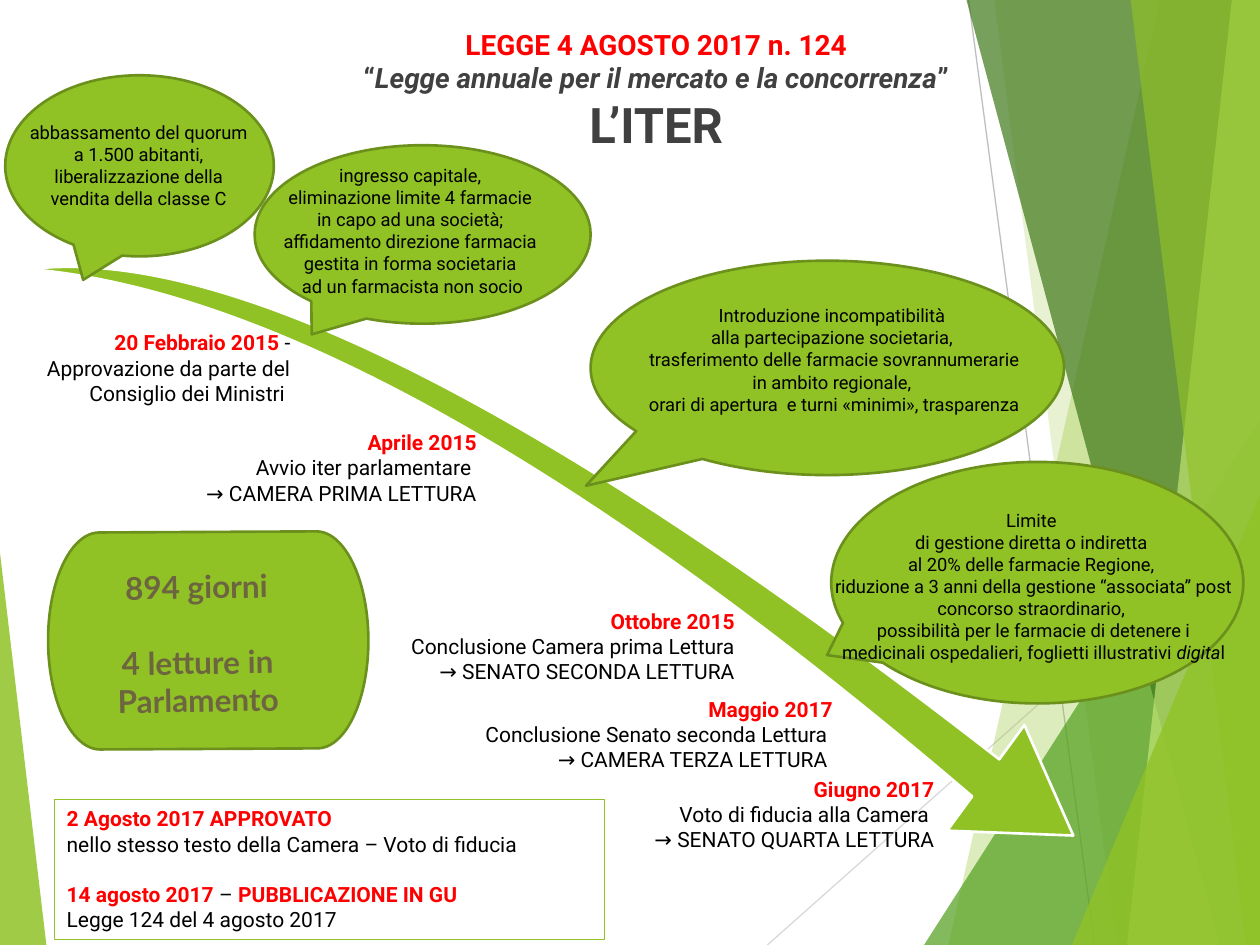
"""Build the slide on the passage of Italian competition law 124 of 2017."""
import pptx
import pptx.dml.color
import pptx.enum.shapes
import pptx.enum.text
import pptx.oxml
import pptx.oxml.ns
import pptx.util

Pt = pptx.util.Pt
RGB = pptx.dml.color.RGBColor
SHAPE = pptx.enum.shapes.MSO_SHAPE
ALIGN = pptx.enum.text.PP_ALIGN
ANCHOR = pptx.enum.text.MSO_ANCHOR

WIDTH, HEIGHT, FACET_TOP = 720, 540, -0.72
GREEN, DARK_GREEN = RGB(0x90, 0xC2, 0x26), RGB(0x6B, 0x90, 0x1C)
LEAF, FOREST, LIME = RGB(0x54, 0xA0, 0x21), RGB(0x3F, 0x78, 0x19), RGB(0xC0, 0xE4, 0x74)
RED, BLACK, WHITE = RGB(0xFF, 0, 0), RGB(0, 0, 0), RGB(0xFF, 0xFF, 0xFF)
CHARCOAL, OLIVE = RGB(0x40, 0x40, 0x40), RGB(0x6D, 0x65, 0x40)

RULES = [
    ((553.5, 0), (625.5, HEIGHT), RGB(0xBF, 0xBF, 0xBF)),
    ((WIDTH, 290), (438.5, HEIGHT), RGB(0xD9, 0xD9, 0xD9)),
]
# Facets are (top x, bottom x); triangles are (box, apex).
DECOR = [
    ("facet", (663, 542), GREEN, 30),
    ("facet", (567.5, 638.5), GREEN, 20),
    ("triangle", ((528, 240, 192, 300), 1), LEAF, 72),
    ("facet", (551.5, 697), FOREST, 70),
    ("facet", (704, 643.5), LIME, 70),
    ("facet", (646, 711.5), GREEN, 65),
    ("triangle", ((612.5, 283, 107.5, 257), 1), GREEN, 80),
    ("triangle", ((0, 316, 26.5, 224), 0), GREEN, 85),
]

DATE = {"color": RED, "bold": True}
ITALIC = {"italic": True}
TITLE = [
    [("LEGGE 4 AGOSTO 2017 n. 124", {"color": RED})],
    ["“", ("Legge annuale per il mercato e la concorrenza", ITALIC), "”"],
    [("L’ITER", {"size": 28})],
]
MILESTONES = [
    ((3, 185, 170), [
        [("20 Febbraio 2015 ", DATE), "- Approvazione da parte del Consiglio dei Ministri "]]),
    ((76.5, 242, 203), [
        [("Aprile 2015", DATE)], ["Avvio iter parlamentare "], ["→ CAMERA PRIMA LETTURA"]]),
    ((224, 344, 203), [
        [("Ottobre 2015", DATE)], ["Conclusione Camera prima Lettura"],
        ["→ SENATO SECONDA LETTURA"]]),
    ((263.5, 394.5, 219.5), [
        [("Maggio 2017", DATE)], ["Conclusione Senato seconda Lettura "],
        ["→ CAMERA TERZA LETTURA "]]),
    ((354.5, 440, 186.5), [
        [("Giugno 2017", DATE)], ["Voto di fiducia alla Camera "],
        ["→ SENATO QUARTA LETTURA"]]),
]
MILESTONE_HEIGHT = 51
BUBBLES = [
    ((475, 264, 235.5, 138), (-0.51, 0.3), (470, 287.5, 241.2, 96.5), [
        ["Limite "],
        ["di gestione diretta o indiretta "],
        ["al 20% delle farmacie Regione, "],
        ["riduzione a 3 anni della gestione “associata” post concorso straordinario, "],
        ["possibilità per le farmacie di detenere i medicinali ospedalieri, "
         "foglietti illustrativi ", ("digita", ITALIC), "l"]]),
    ((337.5, 149, 270.5, 122.5), (-0.51, 0.55), (322, 170.5, 309.5, 70.5), [
        ["Introduzione incompatibilità "],
        ["alla partecipazione societaria, "],
        ["trasferimento delle farmacie sovrannumerarie"],
        ["in ambito regionale, "],
        ["orari di apertura  e turni «minimi», trasparenza"]]),
    ((145.5, 83, 192, 102), (-0.33, 0.56), (136, 90.5, 199.5, 83.5), [
        ["ingresso capitale, "],
        ["eliminazione limite 4 farmacie "],
        ["in capo ad una società; "],
        ["affidamento direzione farmacia "],
        ["gestita in forma societaria "],
        ["ad un farmacista non socio"]]),
    ((3, 43, 153.5, 103.5), (-0.21, 0.63), (8, 65.5, 142.5, 58), [
        ["abbassamento del quorum a 1.500 abitanti, liberalizzazione della "
         "vendita della classe C"]]),
]
DURATION = [["894 giorni"], ["4 letture in Parlamento"]]
OUTCOME = [
    [("2 Agosto 2017 APPROVATO", DATE)],
    ["nello stesso testo della Camera – Voto di fiducia"],
    [("14 agosto 2017", DATE), " – ", ("PUBBLICAZIONE IN GU", DATE)],
    ["Legge 124 del 4 agosto 2017"],
]


def points(values):
    return [Pt(value) for value in values]


def paint(shape, fill=None, line=None, weight=1.5, opacity=100):
    shape.shadow.inherit = False
    if fill is None:
        shape.fill.background()
    else:
        shape.fill.solid()
        shape.fill.fore_color.rgb = fill
    if opacity < 100:
        color = shape.fill._xPr.find(".//" + pptx.oxml.ns.qn("a:srgbClr"))
        color.append(pptx.oxml.parse_xml(
            f'<a:alpha {pptx.oxml.ns.nsdecls("a")} val="{opacity * 1000}"/>'))
    if line is None:
        shape.line.fill.background()
    else:
        shape.line.color.rgb = line
        shape.line.width = Pt(weight)


def add_preset(slide, preset, box, adjustments=(), rotation=0, **look):
    shape = slide.shapes.add_shape(preset, *points(box))
    for index, value in enumerate(adjustments):
        shape.adjustments[index] = value
    shape.rotation = rotation
    paint(shape, **look)
    return shape


def add_facet(slide, top_x, bottom_x, **look):
    builder = slide.shapes.build_freeform(top_x, FACET_TOP, scale=Pt(1))
    builder.add_line_segments(
        [(WIDTH, FACET_TOP), (WIDTH, HEIGHT), (bottom_x, HEIGHT)], close=True)
    paint(builder.convert_to_shape(), **look)


def add_rule(slide, start, end, color):
    rule = slide.shapes.add_connector(
        pptx.enum.shapes.MSO_CONNECTOR.STRAIGHT, *points(start + end))
    rule.line.color.rgb = color
    rule.line.width = Pt(0.75)
    rule._element.spPr.append(
        pptx.oxml.parse_xml(f'<a:effectLst {pptx.oxml.ns.nsdecls("a")}/>'))


def write(shape, paragraphs, size=12, font="Roboto", color=BLACK, bold=False,
          align=ALIGN.LEFT, anchor=ANCHOR.TOP, gaps=None):
    frame = shape.text_frame
    frame.word_wrap = True
    frame.vertical_anchor = anchor
    for index, parts in enumerate(paragraphs):
        paragraph = frame.add_paragraph() if index else frame.paragraphs[0]
        paragraph.alignment = align
        if gaps and index in gaps:
            paragraph.space_before = Pt(gaps[index])
        for part in parts:
            words, style = (part, {}) if isinstance(part, str) else part
            run = paragraph.add_run()
            run.text = words
            run.font.name = font
            run.font.size = Pt(style.get("size", size))
            run.font.bold = style.get("bold", bold)
            run.font.italic = style.get("italic", False)
            run.font.color.rgb = style.get("color", color)


def main():
    deck = pptx.Presentation()
    deck.slide_width, deck.slide_height = Pt(WIDTH), Pt(HEIGHT)
    slide = deck.slides.add_slide(deck.slide_layouts[6])

    for rule in RULES:
        add_rule(slide, *rule)
    for kind, geometry, color, opacity in DECOR:
        if kind == "facet":
            add_facet(slide, *geometry, fill=color, opacity=opacity)
        else:
            box, apex = geometry
            add_preset(slide, SHAPE.ISOSCELES_TRIANGLE, box, [apex],
                       fill=color, opacity=opacity)

    add_preset(slide, SHAPE.SWOOSH_ARROW, (-4.5, 209, 658, 193), (0.135, 0.314),
               rotation=42.6, fill=GREEN, line=WHITE)
    for balloon, tail, _, _ in BUBBLES:
        add_preset(slide, SHAPE.OVAL_CALLOUT, balloon, tail, fill=GREEN, line=DARK_GREEN)
    for place, stage in MILESTONES:
        write(slide.shapes.add_textbox(*points(place + (MILESTONE_HEIGHT,))), stage,
              align=ALIGN.RIGHT)

    add_preset(slide, SHAPE.FLOWCHART_TERMINATOR, (27.5, 304, 183, 124),
               rotation=-0.3, fill=GREEN, line=DARK_GREEN)
    duration = add_preset(slide, SHAPE.FLOWCHART_TERMINATOR, (26, 301, 173.5, 133),
                          rotation=-0.9)
    write(duration, DURATION, size=18, font="Lato", color=OLIVE, bold=True,
          align=ALIGN.CENTER, anchor=ANCHOR.MIDDLE, gaps={1: 21.6})

    write(slide.shapes.add_textbox(*points((169, 12, 412, 80))), TITLE, size=16,
          color=CHARCOAL, bold=True, align=ALIGN.CENTER)
    for _, _, place, remark in BUBBLES:
        write(slide.shapes.add_textbox(*points(place)), remark, size=10.5,
              align=ALIGN.CENTER)

    outcome = add_preset(slide, SHAPE.RECTANGLE, (31, 457, 314.5, 80),
                         fill=WHITE, line=GREEN, weight=0.75)
    write(outcome, OUTCOME, gaps={2: 14.4})
    deck.save("out.pptx")


if __name__ == "__main__":
    main()
